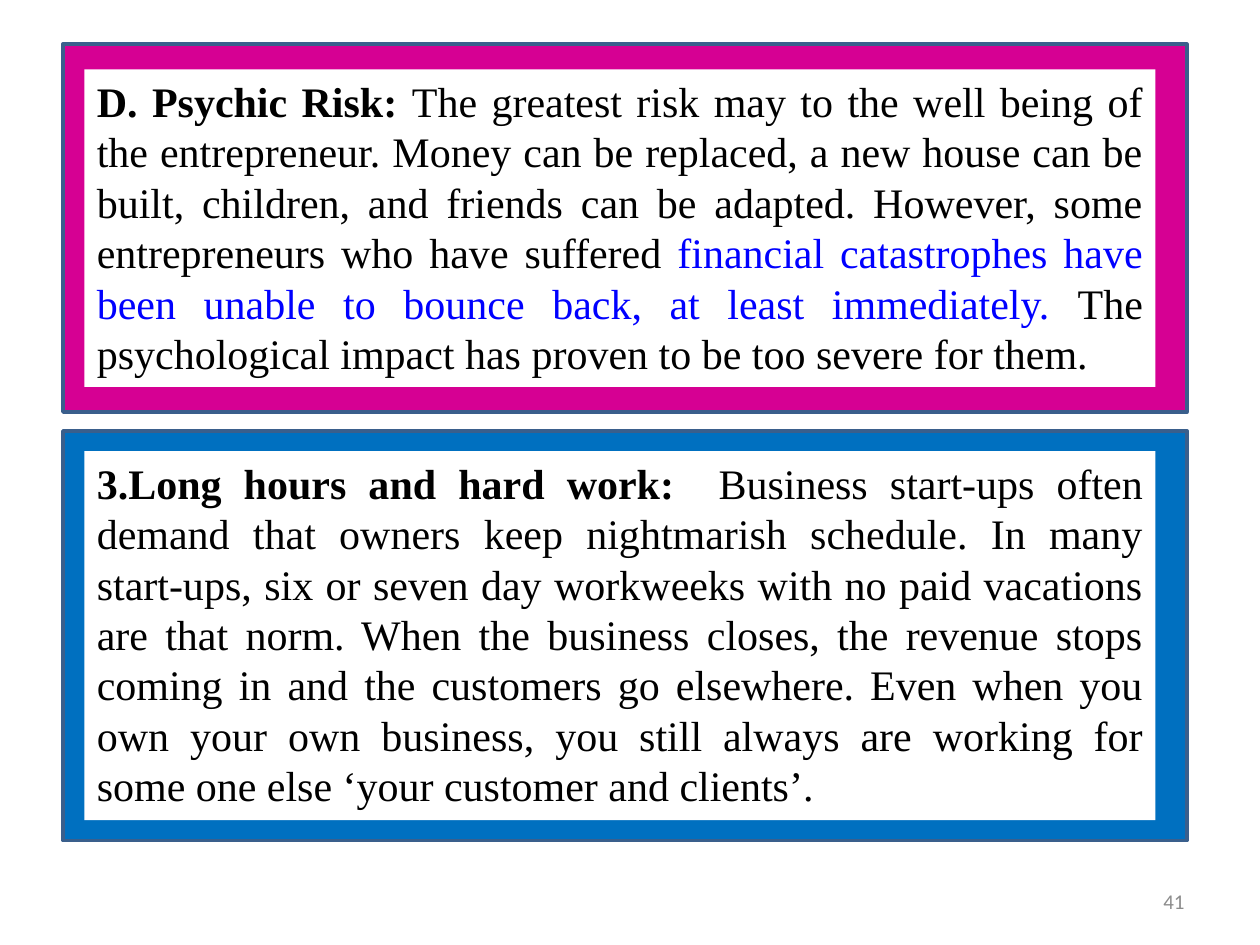
"""Build a slide with two framed text panels and a page number."""
import pptx
import pptx.dml.color
import pptx.enum.shapes
import pptx.enum.text
import pptx.util

Inches = pptx.util.Inches
Pt = pptx.util.Pt
RGBColor = pptx.dml.color.RGBColor
Shape = pptx.enum.shapes.MSO_SHAPE
Align = pptx.enum.text.PP_ALIGN
Anchor = pptx.enum.text.MSO_ANCHOR

MAGENTA = RGBColor(0xD6, 0x00, 0x93)
BLUE = RGBColor(0x00, 0x70, 0xC0)
BORDER = RGBColor(0x3A, 0x5F, 0x8C)
WHITE = RGBColor(0xFF, 0xFF, 0xFF)
BLACK = RGBColor(0x00, 0x00, 0x00)
HIGHLIGHT = RGBColor(0x00, 0x00, 0xFF)
GRAY = RGBColor(0x8C, 0x8C, 0x8C)

FRAME_LEFT, FRAME_WIDTH = 0.5, 8.92
TEXT_LEFT, TEXT_WIDTH = 0.67, 8.5

PANELS = [
    {
        "color": MAGENTA, "top": 0.35, "height": 2.92, "margin": 0.2,
        "spans": [
            ("D. Psychic Risk: ", True, BLACK),
            ("The greatest risk may to the well being of the entrepreneur. "
             "Money can be replaced, a new house can be built, children, and "
             "friends can be adapted. However, some entrepreneurs who have "
             "suffered ", False, BLACK),
            ("financial catastrophes have been unable to bounce back, at "
             "least immediately. ", False, HIGHLIGHT),
            ("The psychological impact has proven to be too severe for "
             "them. ", False, BLACK),
        ],
    },
    {
        "color": BLUE, "top": 3.42, "height": 3.25, "margin": 0.16,
        "spans": [
            ("3.Long hours and hard work:  ", True, BLACK),
            ("Business start-ups often demand that owners keep nightmarish "
             "schedule. In many start-ups, six or seven day workweeks with no "
             "paid vacations are that norm. When the business closes, the "
             "revenue stops coming in and the customers go elsewhere. Even "
             "when you own your own business, you still always are working "
             "for some one else ‘your customer and clients’. ", False, BLACK),
        ],
    },
]
PAGE_NUMBER = "41"


def add_block(page, kind, left, top, width, height, color):
    block = page.shapes.add_shape(
        kind, Inches(left), Inches(top), Inches(width), Inches(height))
    block.shadow.inherit = False
    block.fill.solid()
    block.fill.fore_color.rgb = color
    return block


def add_panel(page, panel):
    top, height, margin = panel["top"], panel["height"], panel["margin"]
    frame = add_block(page, Shape.FLOWCHART_PROCESS, FRAME_LEFT, top,
                      FRAME_WIDTH, height, panel["color"])
    frame.line.color.rgb = BORDER
    frame.line.width = Pt(2)

    box = add_block(page, Shape.RECTANGLE, TEXT_LEFT, top + margin,
                    TEXT_WIDTH, height - 2 * margin, WHITE)
    box.line.fill.background()
    box.text_frame.word_wrap = True
    box.text_frame.auto_size = pptx.enum.text.MSO_AUTO_SIZE.SHAPE_TO_FIT_TEXT
    box.text_frame.vertical_anchor = Anchor.TOP
    para = box.text_frame.paragraphs[0]
    para.alignment = Align.JUSTIFY
    para.font.name = "Times New Roman"
    para.font.size = Pt(24)
    for text, bold, color in panel["spans"]:
        span = para.add_run()
        span.text = text
        span.font.bold = bold
        span.font.color.rgb = color
        span.font.name = "Times New Roman"
        span.font.size = Pt(24)


def add_page_number(page):
    box = page.shapes.add_textbox(
        Inches(7.17), Inches(6.95), Inches(2.33), Inches(0.4))
    box.text_frame.word_wrap = True
    box.text_frame.vertical_anchor = Anchor.MIDDLE
    para = box.text_frame.paragraphs[0]
    para.text = PAGE_NUMBER
    para.alignment = Align.RIGHT
    para.font.name = "Calibri"
    para.font.size = Pt(12)
    para.font.color.rgb = GRAY


def main():
    deck = pptx.Presentation()
    deck.slide_width = Inches(10)
    deck.slide_height = Inches(7.5)
    page = deck.slides.add_slide(deck.slide_layouts[6])
    for panel in PANELS:
        add_panel(page, panel)
    add_page_number(page)
    deck.save("out.pptx")


if __name__ == "__main__":
    main()
